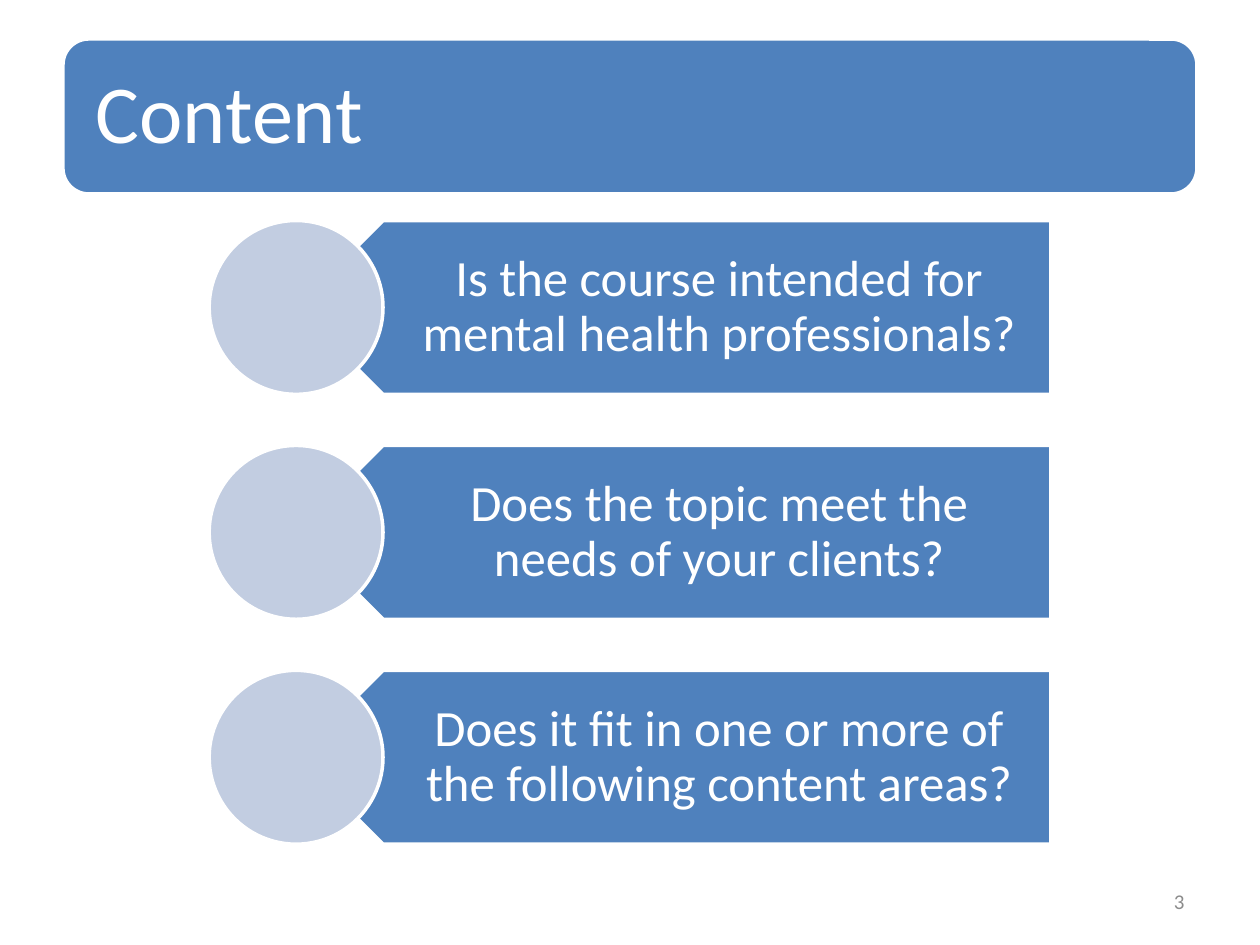
from dataclasses import dataclass

from pptx import Presentation
from pptx.dml.color import RGBColor
from pptx.enum.shapes import MSO_SHAPE
from pptx.enum.text import MSO_ANCHOR, MSO_AUTO_SIZE, PP_ALIGN
from pptx.util import Inches, Pt

ROUNDED, PENTAGON, OVAL = MSO_SHAPE.ROUNDED_RECTANGLE, MSO_SHAPE.PENTAGON, MSO_SHAPE.OVAL
LEFT, CENTER, RIGHT = PP_ALIGN.LEFT, PP_ALIGN.CENTER, PP_ALIGN.RIGHT
MIDDLE = MSO_ANCHOR.MIDDLE
NO_AUTOFIT = MSO_AUTO_SIZE.NONE


@dataclass(frozen=True)
class Theme:
    font: str = "Calibri"
    blue: RGBColor = RGBColor(0x4F, 0x81, 0xBD)
    pale: RGBColor = RGBColor(0xC2, 0xCD, 0xE1)
    white: RGBColor = RGBColor(0xFF, 0xFF, 0xFF)
    gray: RGBColor = RGBColor(0x8C, 0x8C, 0x8C)
    title_size: int = 47
    question_size: int = 29
    number_size: int = 12


theme = Theme()


def add_panel(kind, left, top, width, height, color):
    panel = page.shapes.add_shape(
        kind, Inches(left), Inches(top), Inches(width), Inches(height))
    panel.shadow.inherit = False
    panel.fill.solid()
    panel.fill.fore_color.rgb = color
    panel.line.color.rgb = theme.white
    panel.line.width = Pt(2)
    return panel


def write_text(box, text, size, color, align, insets, spacing=1.0):
    frame = box.text_frame
    frame.word_wrap = True
    frame.auto_size = NO_AUTOFIT
    frame.vertical_anchor = MIDDLE
    (frame.margin_left, frame.margin_top,
     frame.margin_right, frame.margin_bottom) = map(Inches, insets)
    para = frame.paragraphs[0]
    para.text = text
    para.alignment = align
    para.line_spacing = spacing
    para.font.name = theme.font
    para.font.size = Pt(size)
    para.font.color.rgb = color


deck = Presentation()
deck.slide_width, deck.slide_height = Inches(10), Inches(7.5)
page = deck.slides.add_slide(deck.slide_layouts[5])

# Title on its banner, with the banner moved behind the placeholder
title = page.shapes.title
title.left, title.top = Inches(0.56), Inches(0.37)
title.width, title.height = Inches(8.88), Inches(1.11)
write_text(title, "Content", theme.title_size, theme.white, LEFT,
           (0.2, 0.2, 0.2, 0.2), 0.9)
banner = add_panel(ROUNDED, 0.5, 0.31, 9, 1.23, theme.blue)
title._element.addprevious(banner._element)

# Questions: a left-pointing bar, its text and a circle over the tip
questions = [
    "Is the course intended for mental health professionals?",
    "Does the topic meet the needs of your clients?",
    "Does it fit in one or more of the following content areas?",
]
first_top, pitch, row_height = 1.75, 1.785, 1.38
for row, question in enumerate(questions):
    top = first_top + row * pitch
    bar = add_panel(PENTAGON, 2.35, top, 5.99, row_height, theme.blue)
    bar.rotation = 180
    box = page.shapes.add_textbox(
        Inches(2.7), Inches(top), Inches(5.64), Inches(row_height))
    write_text(box, question, theme.question_size, theme.white, CENTER,
               (0.61, 0.12, 0.23, 0.12), 0.9)
    add_panel(OVAL, 1.66, top, row_height, row_height, theme.pale)

# Page number
number = page.shapes.add_textbox(Inches(7.17), Inches(6.95), Inches(2.33), Inches(0.4))
write_text(number, "3", theme.number_size, theme.gray, RIGHT, (0.1, 0.05, 0.1, 0.05))

deck.save("out.pptx")
